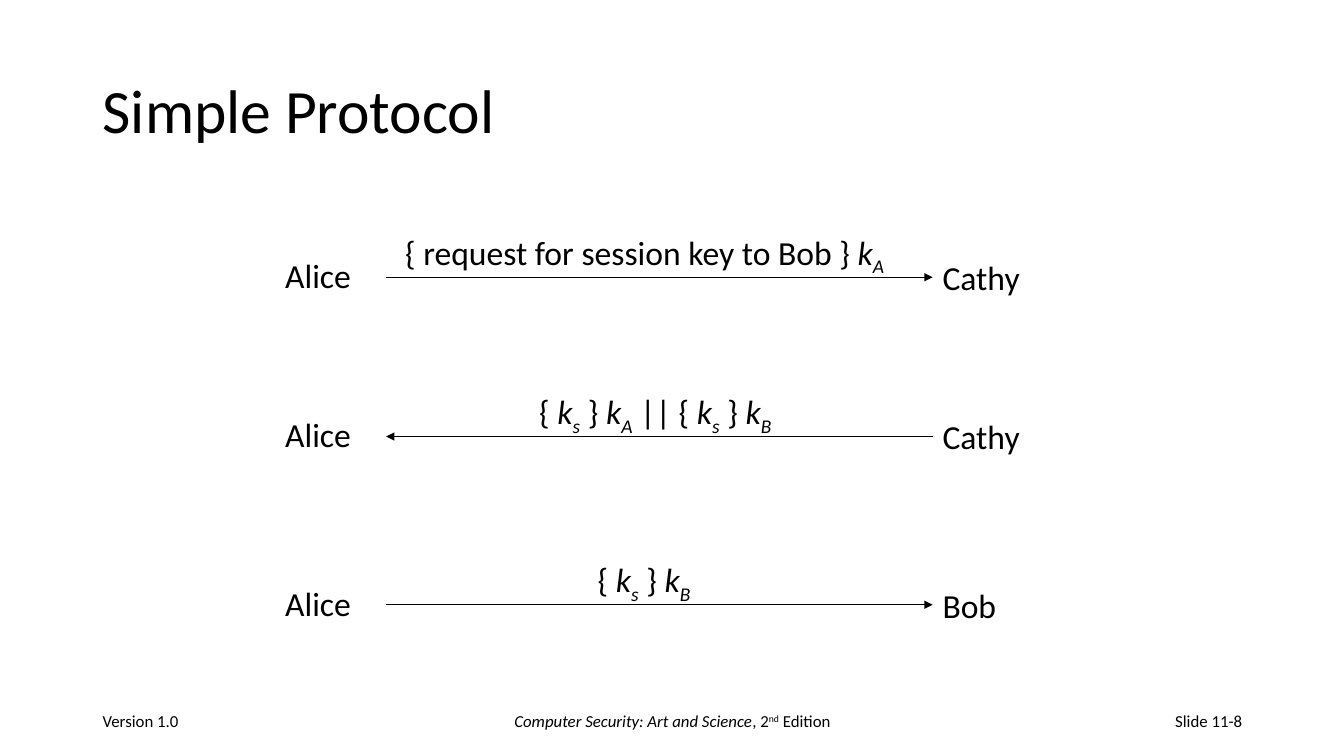
from lxml import etree
from pptx import Presentation
from pptx.dml.color import RGBColor
from pptx.enum.shapes import MSO_CONNECTOR
from pptx.enum.text import MSO_ANCHOR, MSO_AUTO_SIZE, PP_ALIGN
from pptx.oxml.ns import qn
from pptx.util import Inches, Pt

STRAIGHT = MSO_CONNECTOR.STRAIGHT
TOP, MIDDLE = MSO_ANCHOR.TOP, MSO_ANCHOR.MIDDLE
LEFT, CENTER, RIGHT = PP_ALIGN.LEFT, PP_ALIGN.CENTER, PP_ALIGN.RIGHT
FIT, FIXED = MSO_AUTO_SIZE.SHAPE_TO_FIT_TEXT, MSO_AUTO_SIZE.NONE
FONT, BLACK = "Calibri", "000000"
SUB, SUPER = -25000, 30000


def color(value):
    return RGBColor.from_string(value)


def key(name):
    """Runs for a key: italic k with an italic subscript."""
    return [("k", True, 0), (name, True, SUB)]


def plain(text):
    return [(text, False, 0)]


def add_text(slide, box, runs, size, align=LEFT, anchor=MIDDLE, wrap=True):
    """Place one paragraph; each run is (text, italic, baseline)."""
    tb = slide.shapes.add_textbox(*map(Inches, box))
    tf = tb.text_frame
    tf.word_wrap = wrap
    tf.auto_size = FIXED if wrap else FIT
    tf.vertical_anchor = anchor
    p = tf.paragraphs[0]
    p.alignment = align
    p.font.name, p.font.size = FONT, Pt(size)
    p.font.color.rgb = color(BLACK)
    for text, italic, baseline in runs:
        r = p.add_run()
        r.text = text
        if italic:
            r.font.italic = True
        if baseline:
            r._r.get_or_add_rPr().set("baseline", str(baseline))
    return p


def add_arrow(slide, x1, x2, y, end):
    """Draw a level line with an arrowhead at headEnd (x1) or tailEnd (x2)."""
    line = slide.shapes.add_connector(
        STRAIGHT, Inches(x1), Inches(y), Inches(x2), Inches(y))
    line.line.color.rgb = color(BLACK)
    line.line.width = Pt(0.75)
    ln = line.line._get_or_add_ln()
    etree.SubElement(ln, qn("a:" + end)).set("type", "triangle")
    etree.SubElement(line._element.spPr, qn("a:effectLst"))


def add_exchange(slide, box, receiver, message, message_box, end):
    """One protocol step: sender, arrow, receiver and message above."""
    left, y, width = box
    message_left, message_width = message_box
    receiver_name, receiver_width = receiver
    arrow_left, arrow_right = left + 1.1, left + width
    labels = [
        (left, y - 0.27, 0.86, plain("Alice")),
        (arrow_right, y - 0.25, receiver_width, plain(receiver_name)),
        (message_left, y - 0.5, message_width, message),
    ]
    add_arrow(slide, arrow_left, arrow_right, y, end)
    for x, top, w, runs in labels:
        add_text(slide, (x, top, w, 0.5), runs, 24, anchor=TOP, wrap=False)


def add_footer(slide, left, top, width, height):
    title = [("Computer Security: Art and Science", True, 0),
             (", 2", False, 0), ("nd", False, SUPER), (" Edition", False, 0)]
    add_text(slide, (left, top, 3, height), plain("Version 1.0"), 12)
    add_text(slide, (left + (width - 4.5) / 2, top, 4.5, height),
             title, 12, CENTER)
    add_text(slide, (left + width - 3, top, 3, height),
             plain("Slide 11-8"), 12, RIGHT)


def main():
    prs = Presentation()
    prs.slide_width, prs.slide_height = Inches(13.33), Inches(7.5)
    slide = prs.slides.add_slide(prs.slide_layouts[6])

    # Title
    p = add_text(slide, (0.92, 0.4, 11.5, 1.45), plain("Simple Protocol"), 44)
    p.line_spacing = 0.9

    # Protocol steps
    for_alice = plain("{ ") + key("s") + plain(" } ") + key("A")
    for_bob = plain("{ ") + key("s") + plain(" } ") + key("B")
    request = plain("{ request for session key to Bob } ") + key("A")
    cathy, bob = ("Cathy", 0.97), ("Bob", 0.74)
    steps = [
        (2.75, cathy, request, (3.92, 5.01), "tailEnd"),
        (4.33, cathy, for_alice + plain(" || ") + for_bob, (5.25, 2.57),
         "headEnd"),
        (6, bob, for_bob, (5.83, 1.15), "tailEnd"),
    ]
    for y, *step in steps:
        add_exchange(slide, (2.73, y, 6.52), *step)

    # Footer
    add_footer(slide, 0.92, 6.95, 11.5, 0.4)

    prs.save("out.pptx")


if __name__ == "__main__":
    main()
